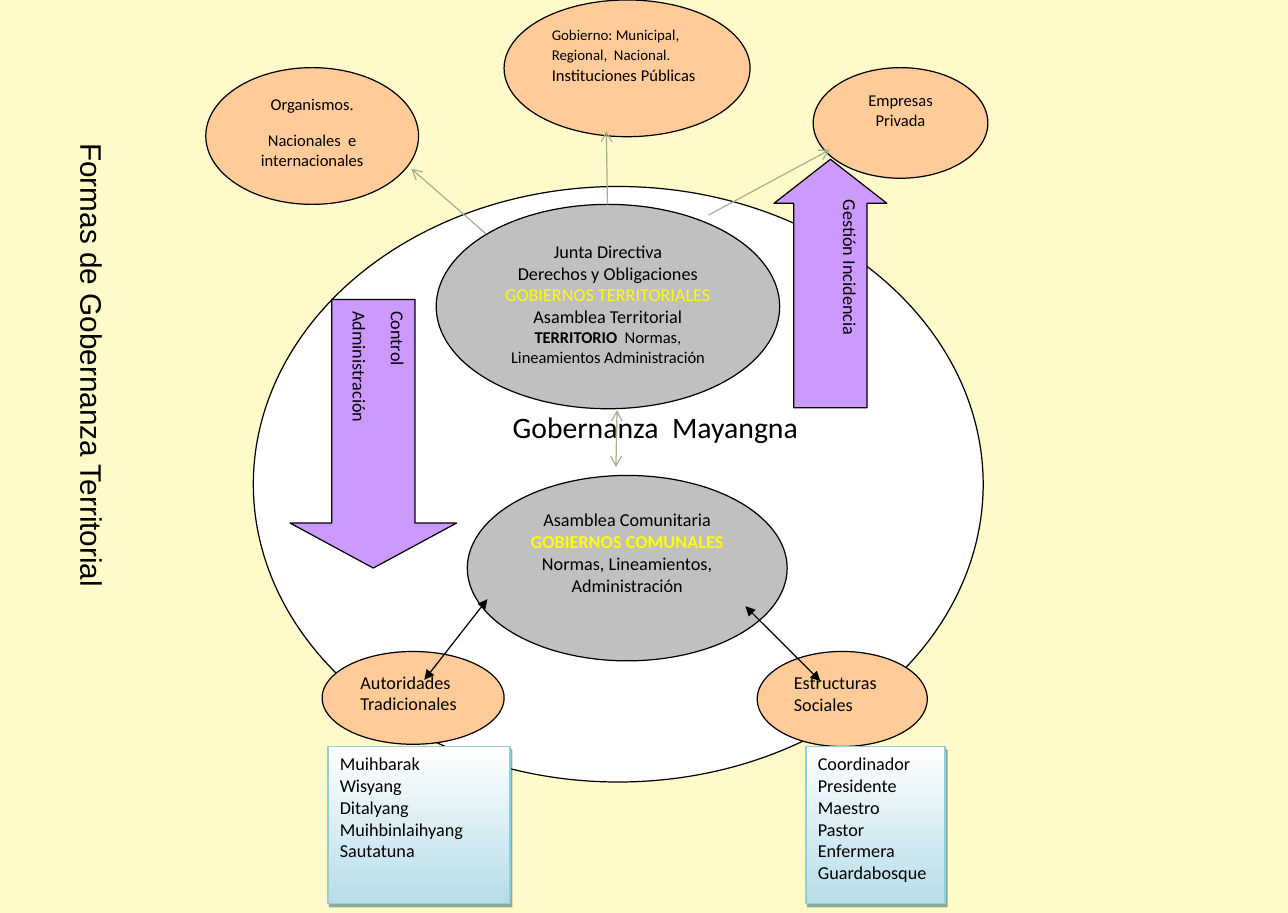
from lxml import etree
from pptx import Presentation
from pptx.dml.color import RGBColor
from pptx.enum.shapes import MSO_CONNECTOR, MSO_SHAPE
from pptx.enum.text import MSO_ANCHOR, MSO_AUTO_SIZE, PP_ALIGN
from pptx.oxml.ns import qn
from pptx.util import Pt

ELLIPSE, RECT = MSO_SHAPE.OVAL, MSO_SHAPE.RECTANGLE
UP, DOWN = MSO_SHAPE.UP_ARROW, MSO_SHAPE.DOWN_ARROW
LEFT, CENTER = PP_ALIGN.LEFT, PP_ALIGN.CENTER

THEME = dict(
    background="FEFAC9", white="FFFFFF", gray="C0C0C0", peach="FFCC99",
    violet="CC99FF", black="000000", yellow="FFFF00", sage="A1B28E",
    list_end="B6DDE8", list_line="92CDDC", list_shadow="205867",
    title=18, heading=18, body=11, note=10, small=9,
    font="Calibri", title_font="Arial", serif="Times New Roman",
)

# Content: a paragraph is a list of runs, a run is (text, changes)
TITLE = "Formas de Gobernanza Territorial"
YELLOW, BOLD, SERIF = dict(color="yellow"), dict(bold=True), dict(font="serif")
SMALL, NOTE, BODY = dict(size="small"), dict(size="note"), dict(size="body")

# (left, top, width, height), shape, fill, size, align, space after, paragraphs
CIRCLE = ((153.4, 113, 442, 360.7), ELLIPSE, "white", "heading", CENTER, 0,
          [[("Gobernanza  Mayangna", {})]])
SHAPES = [
    ((264.2, 123.8, 208, 123.8), ELLIPSE, "gray", "body", CENTER, 0, [
        [("Junta Directiva", {})],
        [("Derechos y Obligaciones", {})],
        [("GOBIERNOS TERRITORIALES", YELLOW)],
        [("Asamblea Territorial", {})],
        [("TERRITORIO  ", NOTE | BOLD),
         ("Normas, Lineamientos Administración", NOTE)]]),
    ((195.1, 394.6, 110.2, 56.2), ELLIPSE, "peach", "body", LEFT, 10,
     [[("Autoridades Tradicionales", {})]]),
    ((283, 288, 193.7, 112.3), ELLIPSE, "gray", "body", CENTER, 0, [
        [("Asamblea Comunitaria", {})],
        [("GOBIERNOS COMUNALES", YELLOW | BOLD)],
        [("Normas, Lineamientos, Administración", {})]]),
    ((468.7, 96.5, 68.4, 150.5), UP, "violet", "body", LEFT, 10,
     [[("Gestión Incidencia", {})]]),
    ((175.7, 181.4, 100.8, 162.7), DOWN, "violet", "body", LEFT, 10,
     [[("Control", {})], [("Administración", {})]]),
    ((458.6, 394.6, 103, 57.6), ELLIPSE, "peach", "body", LEFT, 10,
     [[("Estructuras Sociales", {})]]),
    ((492.5, 41, 105.8, 67), ELLIPSE, "peach", "note", CENTER, 10,
     [[("Empresas Privada", {})]]),
    ((124.6, 41, 128.9, 82.8), ELLIPSE, "peach", "note", CENTER, 10, [
        [("Organismos", {}), (".", SERIF)],
        [("Nacionales  e internacionales", {})]]),
    ((305.3, 0, 149, 82.8), ELLIPSE, "peach", "note", LEFT, 10, [
        [("Gobierno: Municipal, Regional,  Nacional.", SMALL),
         (" Instituciones", {}), (" ", BODY), ("Públicas", {})]]),
]
ARROW_ADJUST = {UP: (0.65, 0.39), DOWN: (0.5, 0.27)}

LIST_TOP, LIST_HEIGHT = 452.2, 95
LISTS = [  # left, width, names
    (198.7, 110.2, ["Muihbarak", "Wisyang", "Ditalyang", "Muihbinlaihyang",
                    "Sautatuna"]),
    (488.2, 84.2, ["Coordinador", "Presidente", "Maestro", "Pastor",
                   "Enfermera", "Guardabosque"]),
]

LINKS = [  # start, end, colour, arrowhead, both ends
    ((295.2, 362.9), (257, 411.8), "black", "triangle", True),
    ((451.4, 367.2), (496.8, 412.6), "black", "triangle", True),
    ((373.7, 248.4), (373, 283), "sage", "arrow", True),
    ((367.9, 123.8), (367.2, 79.2), "sage", "arrow", False),
    ((429.1, 130.3), (502.6, 90.7), "sage", "arrow", False),
    ((294.5, 141.8), (249.1, 102.2), "sage", "arrow", False),
]


def rgb(name):
    return RGBColor.from_string(THEME[name])


def add_run(p, text, size="body", color="black", bold=False, font="font"):
    r = p.add_run()
    r.text = text
    r.font.size, r.font.bold, r.font.name = Pt(THEME[size]), bold, THEME[font]
    r.font.color.rgb = rgb(color)


def add_node(s, box, kind, fill, size, align, after, paragraphs):
    sp = s.shapes.add_shape(kind, *map(Pt, box))
    sp.shadow.inherit = False
    if fill:
        sp.fill.solid()
        sp.fill.fore_color.rgb = rgb(fill)
    sp.line.color.rgb, sp.line.width = rgb("black"), Pt(0.75)
    tf = sp.text_frame
    tf.word_wrap, tf.vertical_anchor = True, MSO_ANCHOR.TOP
    for i, value in enumerate(ARROW_ADJUST.get(kind, ())):
        sp.adjustments[i] = value
    if kind in ARROW_ADJUST:
        tf._txBody.bodyPr.set("vert", "eaVert")
    for i, runs in enumerate(paragraphs):
        p = tf.add_paragraph() if i else tf.paragraphs[0]
        p.alignment, p.space_after = align, Pt(after)
        for text, changes in runs:
            add_run(p, text, **({"size": size} | changes))
    return sp


def add_list(s, left, width, names):
    sp = add_node(s, (left, LIST_TOP, width, LIST_HEIGHT), RECT, None, "body",
                  LEFT, 0, [[(name, {})] for name in names])
    sp.fill.gradient()
    sp.fill.gradient_angle = 270
    for i, (stop, color) in enumerate(zip(sp.fill.gradient_stops,
                                          ("white", "list_end"))):
        stop.position, stop.color.rgb = i, rgb(color)
    sp.line.color.rgb, sp.line.width = rgb("list_line"), Pt(1)
    effects = sp._element.spPr.find(qn("a:effectLst"))
    shadow = etree.SubElement(effects, qn("a:outerShdw"), blurRad="0",
                              dist=str(Pt(2.2)), dir=str(63 * 60000),
                              algn="ctr", rotWithShape="0")
    color = etree.SubElement(shadow, qn("a:srgbClr"), val=THEME["list_shadow"])
    etree.SubElement(color, qn("a:alpha"), val="50000")


def add_link(s, start, end, color, head, both):
    line = s.shapes.add_connector(MSO_CONNECTOR.STRAIGHT,
                                  *map(Pt, start + end))
    line.line.color.rgb, line.line.width = rgb(color), Pt(0.75)
    ln = line.line._get_or_add_ln()
    for tag in ("a:headEnd", "a:tailEnd") if both else ("a:tailEnd",):
        etree.SubElement(ln, qn(tag), type=head)
    etree.SubElement(line._element.spPr, qn("a:effectLst"))


def main():
    prs = Presentation()
    prs.slide_width, prs.slide_height = Pt(780), Pt(553)
    s = prs.slides.add_slide(prs.slide_layouts[5])
    s.background.fill.solid()
    s.background.fill.fore_color.rgb = rgb("background")

    # Title, turned to read downwards
    title = s.shapes.title
    title.left, title.top = Pt(-107.2), Pt(228.2)
    title.width, title.height = Pt(326), Pt(28.8)
    title.rotation = 90
    tf = title.text_frame
    tf.word_wrap, tf.auto_size = True, MSO_AUTO_SIZE.NONE
    tf.vertical_anchor = MSO_ANCHOR.TOP
    tf.paragraphs[0].alignment = LEFT
    add_run(tf.paragraphs[0], TITLE, size="title", font="title_font")

    # Large circle, its heading between the two assemblies
    tf = add_node(s, *CIRCLE).text_frame
    tf.margin_left, tf.margin_top = Pt(52), Pt(82)

    # Actors, lists and the links between them
    for shape in SHAPES:
        add_node(s, *shape)
    for names in LISTS:
        add_list(s, *names)
    for link in LINKS:
        add_link(s, *link)

    prs.save("out.pptx")


if __name__ == "__main__":
    main()
